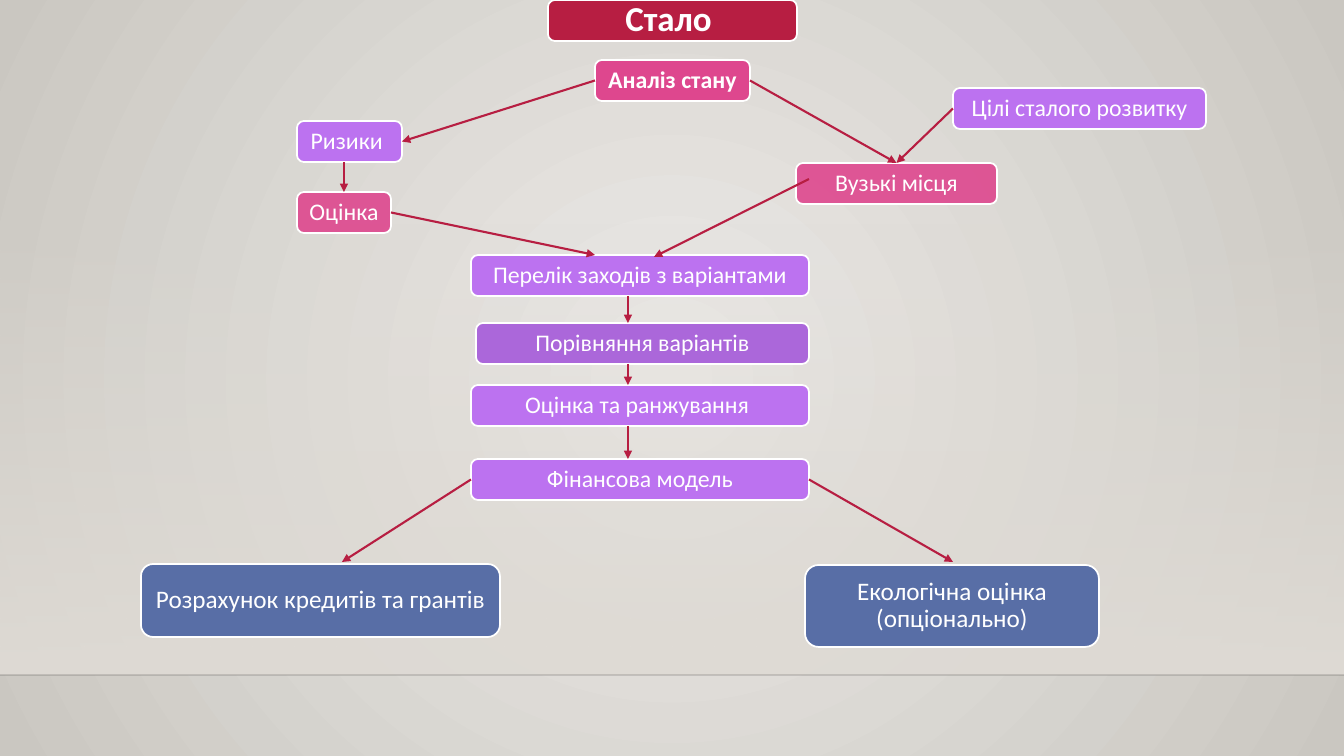
from lxml import etree
from pptx import Presentation
from pptx.dml.color import RGBColor
from pptx.enum.shapes import MSO_CONNECTOR, MSO_SHAPE
from pptx.enum.text import MSO_ANCHOR, MSO_AUTO_SIZE, PP_ALIGN
from pptx.oxml import parse_xml
from pptx.oxml.ns import nsdecls, qn
from pptx.util import Pt

RECTANGLE, ROUNDED = MSO_SHAPE.RECTANGLE, MSO_SHAPE.ROUNDED_RECTANGLE
STRAIGHT = MSO_CONNECTOR.STRAIGHT
MIDDLE, CENTER = MSO_ANCHOR.MIDDLE, PP_ALIGN.CENTER
NO_AUTOFIT = MSO_AUTO_SIZE.NONE
TOP, LEFT, BOTTOM, RIGHT = range(4)

SLIDE_W, SLIDE_H = 1344, 756
EMU_PER_PX = 12192000 / SLIDE_W
ROW_H = 41
FLOW_X = 628
FONT = "Calibri"
COLORS = {
    "glow": "ECEAE7", "edge": "CAC7C1", "wall": "DFDBD5", "floor": "000001",
    "crimson": "B71E42", "pink": "DE478E", "lilac": "BC72F0",
    "violet": "AB67DA", "blue": "586EA6", "white": "FFFFFF",
}

# key: text, left, top, width, height, colour, opacity %, size, bold
STEPS = {
    "analysis": ("Аналіз стану", 595, 60, 155, ROW_H, "pink", 100, 17, True),
    "risks": ("Ризики ", 297, 121, 105, ROW_H, "lilac", 100, 17, False),
    "bottlenecks": ("Вузькі місця", 796, 163, 201, ROW_H, "pink", 90, 17, False),
    "goals": ("Цілі сталого розвитку", 953, 88, 253, ROW_H, "lilac", 100, 17, False),
    "assessment": ("Оцінка", 297, 192, 94, ROW_H, "pink", 90, 17, False),
    "measures": ("Перелік заходів з варіантами", 471, 255, 338, ROW_H, "lilac", 100, 17, False),
    "comparison": ("Порівняння варіантів", 476, 323, 333, ROW_H, "violet", 100, 17, False),
    "ranking": ("Оцінка та ранжування ", 471, 385, 338, ROW_H, "lilac", 100, 17, False),
    "model": ("Фінансова модель", 471, 459, 338, ROW_H, "lilac", 100, 17, False),
    "credits": ("Розрахунок кредитів та грантів", 141, 564, 359, 73, "blue", 100, 18, False),
    "ecology": ("Екологічна оцінка (опціонально)", 805, 565, 294, 82, "blue", 100, 18, False),
}

# An end is either (step, side) or a free point (x, y).
ARROWS = [
    (("analysis", LEFT), ("risks", RIGHT)),
    (("analysis", RIGHT), ("bottlenecks", TOP)),
    (("goals", LEFT), ("bottlenecks", TOP)),
    ((344, 162), ("assessment", TOP)),
    (("assessment", RIGHT), (595, 255)),
    ((809, 179), (654, 257)),
    (("model", LEFT), (342, 562)),
    (("model", RIGHT), (953, 562)),
]
FLOW = ["measures", "comparison", "ranking", "model"]


def px(length):
    return round(length * EMU_PER_PX)


def rgb(color):
    return RGBColor.from_string(COLORS[color])


def set_opacity(paint, percent):
    """Set the opacity of a solid fill held by a shape's or line's XML."""
    color = paint.find(qn("a:solidFill"))[0]
    etree.SubElement(color, qn("a:alpha"), val=str(percent * 1000))


def gradient(start, end, direction, start_opacity=100):
    return (
        f'<a:gradFill {nsdecls("a")} rotWithShape="1"><a:gsLst>'
        f'<a:gs pos="0"><a:srgbClr val="{COLORS[start]}">'
        f'<a:alpha val="{start_opacity * 1000}"/></a:srgbClr></a:gs>'
        f'<a:gs pos="100000"><a:srgbClr val="{COLORS[end]}"/></a:gs>'
        f'</a:gsLst>{direction}</a:gradFill>'
    )


def add_backdrop(slide):
    radial = ('<a:path path="circle"><a:fillToRect l="50000" t="50000" '
              'r="50000" b="50000"/></a:path>')
    background = parse_xml(
        f'<p:bg {nsdecls("p", "a")}><p:bgPr>{gradient("glow", "edge", radial)}'
        '<a:effectLst/></p:bgPr></p:bg>')
    slide.shapes._spTree.addprevious(background)

    wall = slide.shapes.add_shape(RECTANGLE, 0, px(223), px(SLIDE_W), px(452))
    wall.shadow.inherit = False
    wall.line.fill.background()
    downward = '<a:lin ang="5400000" scaled="0"/>'
    wall_fill = parse_xml(gradient("wall", "wall", downward, start_opacity=0))
    wall._element.spPr.find(qn("a:prstGeom")).addnext(wall_fill)

    floor = add_line(slide, (0, 675), (SLIDE_W, 675), "floor", 1)
    set_opacity(floor.line._get_or_add_ln(), 20)


def add_box(slide, left, top, width, height, color, opacity=100):
    box = slide.shapes.add_shape(ROUNDED, px(left), px(top), px(width), px(height))
    box.shadow.inherit = False
    box.fill.solid()
    box.fill.fore_color.rgb = rgb(color)
    if opacity < 100:
        set_opacity(box._element.spPr, opacity)
    box.line.color.rgb = rgb("white")
    box.line.width = Pt(1.25)
    return box


def write_label(shape, text, size, bold, inset):
    frame = shape.text_frame
    frame.word_wrap = True
    frame.auto_size = NO_AUTOFIT
    frame.vertical_anchor = MIDDLE
    frame.margin_left = frame.margin_right = px(inset)
    frame.margin_top = frame.margin_bottom = px(inset)
    paragraph = frame.paragraphs[0]
    paragraph.alignment = CENTER
    paragraph.line_spacing = 0.9
    run = paragraph.add_run()
    run.text = text
    run.font.name = FONT
    run.font.size = Pt(size)
    run.font.bold = bold
    run.font.color.rgb = rgb("white")


def add_title(slide):
    add_box(slide, 548, 0, 249, ROW_H, "crimson")
    title = slide.shapes.title
    title.left, title.top = px(550), px(2)
    title.width, title.height = px(245), px(ROW_H - 4)
    write_label(title, "Стало ", 25, True, 10)
    slide.shapes._spTree.append(title._element)  # in front of its box


def add_line(slide, start, end, color, width):
    line = slide.shapes.add_connector(STRAIGHT, *map(px, start + end))
    line.line.color.rgb = rgb(color)
    line.line.width = Pt(width)
    etree.SubElement(line._element.spPr, qn("a:effectLst"))
    return line


def add_arrow(slide, boxes, start, end):
    """Draw an arrow, joining each end that names a step."""
    points = [(0, 0) if point[0] in boxes else point for point in (start, end)]
    arrow = add_line(slide, *points, "crimson", 1.5)
    etree.SubElement(arrow.line._get_or_add_ln(), qn("a:tailEnd"), type="triangle")
    if start[0] in boxes:
        arrow.begin_connect(boxes[start[0]], start[1])
    if end[0] in boxes:
        arrow.end_connect(boxes[end[0]], end[1])


def main():
    prs = Presentation()
    prs.slide_width, prs.slide_height = px(SLIDE_W), px(SLIDE_H)
    slide = prs.slides.add_slide(prs.slide_layouts.get_by_name("Title Only"))

    add_backdrop(slide)
    add_title(slide)

    boxes = {}
    for step, (text, left, top, width, height, color, opacity, size, bold) in STEPS.items():
        boxes[step] = add_box(slide, left, top, width, height, color, opacity)
        write_label(boxes[step], text, size, bold, 9)

    for start, end in ARROWS:
        add_arrow(slide, boxes, start, end)
    for upper, lower in zip(FLOW, FLOW[1:]):
        upper_top, lower_top = STEPS[upper][2], STEPS[lower][2]
        add_arrow(slide, boxes, (FLOW_X, upper_top + ROW_H), (FLOW_X, lower_top))

    prs.save("out.pptx")


if __name__ == "__main__":
    main()
